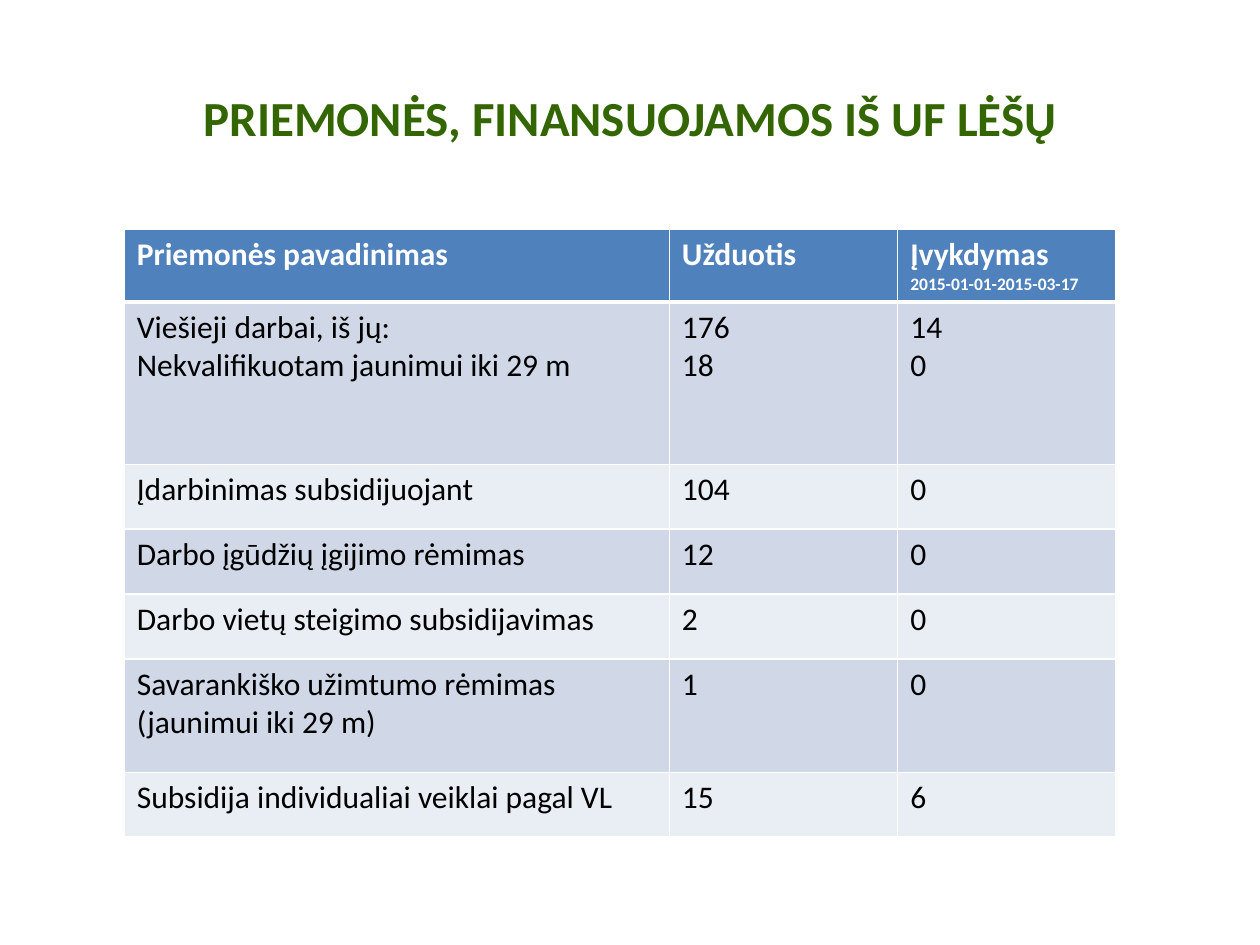
from pptx import Presentation
from pptx.dml.color import RGBColor
from pptx.enum.text import MSO_ANCHOR, PP_ALIGN
from pptx.oxml import parse_xml
from pptx.oxml.ns import nsdecls
from pptx.util import Pt

MIDDLE, TOP = MSO_ANCHOR.MIDDLE, MSO_ANCHOR.TOP
LEFT, CENTER = PP_ALIGN.LEFT, PP_ALIGN.CENTER

GREEN = RGBColor(0x33, 0x66, 0x00)
BLUE = RGBColor(0x4F, 0x81, 0xBD)
DARK = RGBColor(0xD0, 0xD8, 0xE8)
LIGHT = RGBColor(0xE9, 0xED, 0xF4)
WHITE = RGBColor(0xFF, 0xFF, 0xFF)
BLACK = RGBColor(0x00, 0x00, 0x00)

# Content: each cell is a list of lines
TITLE = "PRIEMONĖS, FINANSUOJAMOS IŠ UF LĖŠŲ"
ROWS = [
    (["Priemonės pavadinimas"], ["Užduotis"],
     ["Įvykdymas", "2015-01-01-2015-03-17"]),
    (["Viešieji darbai, iš jų:", "Nekvalifikuotam jaunimui iki 29 m"],
     ["176", "18"], ["14", "0"]),
    (["Įdarbinimas subsidijuojant"], ["104"], ["0"]),
    (["Darbo įgūdžių įgijimo rėmimas"], ["12"], ["0"]),
    (["Darbo vietų steigimo subsidijavimas"], ["2"], ["0"]),
    (["Savarankiško užimtumo rėmimas (jaunimui iki 29 m)"], ["1"], ["0"]),
    (["Subsidija individualiai veiklai pagal VL"], ["15"], ["6"]),
]
WIDTHS = [311.5, 130.5, 124.5]
ROW_H = 37.1
HEIGHTS = {1: 92.8, 5: 64.8}


def write(frame, lines, size=18, color=BLACK, bold=False, align=LEFT, small=None):
    """Fill a text frame; lines after the first may use a smaller size."""
    for i, line in enumerate(lines):
        para = frame.paragraphs[0] if i == 0 else frame.add_paragraph()
        para.alignment = align
        run = para.add_run()
        run.text = line
        font = run.font
        font.name, font.bold = "Calibri", bold
        font.size = Pt(small if small and i else size)
        font.color.rgb = color


def edge(cell, side, width):
    """Add one white border; call before setting the cell's fill."""
    cell._tc.get_or_add_tcPr().append(parse_xml(
        f'<a:{side} {nsdecls("a")} w="{Pt(width)}"><a:solidFill>'
        f'<a:srgbClr val="{WHITE}"/></a:solidFill></a:{side}>'))


deck = Presentation()
deck.slide_width, deck.slide_height = Pt(720), Pt(540)
slide = deck.slides.add_slide(deck.slide_layouts[5])

# Title
title = slide.shapes.title
title.left, title.top, title.width, title.height = Pt(36), Pt(21.6), Pt(648), Pt(90)
title.text_frame.vertical_anchor = MIDDLE
write(title.text_frame, [TITLE], size=28, color=GREEN, bold=True, align=CENTER)

# Table
tall = [HEIGHTS.get(r, ROW_H) for r in range(len(ROWS))]
table = slide.shapes.add_table(len(ROWS), len(WIDTHS), Pt(71), Pt(131.2),
                               Pt(sum(WIDTHS)), Pt(sum(tall))).table
for col, width in zip(table.columns, WIDTHS):
    col.width = Pt(width)

for r, row in enumerate(ROWS):
    table.rows[r].height = Pt(tall[r])
    head = r == 0
    for c, lines in enumerate(row):
        cell = table.cell(r, c)
        cell.vertical_anchor = TOP
        edge(cell, "lnL", 1)
        edge(cell, "lnR", 1)
        edge(cell, "lnT", 3 if r == 1 else 1)
        edge(cell, "lnB", 3 if head else 1)
        cell.fill.solid()
        cell.fill.fore_color.rgb = BLUE if head else DARK if r % 2 else LIGHT
        write(cell.text_frame, lines, color=WHITE if head else BLACK,
              bold=head, small=10 if head else None)

deck.save("out.pptx")
